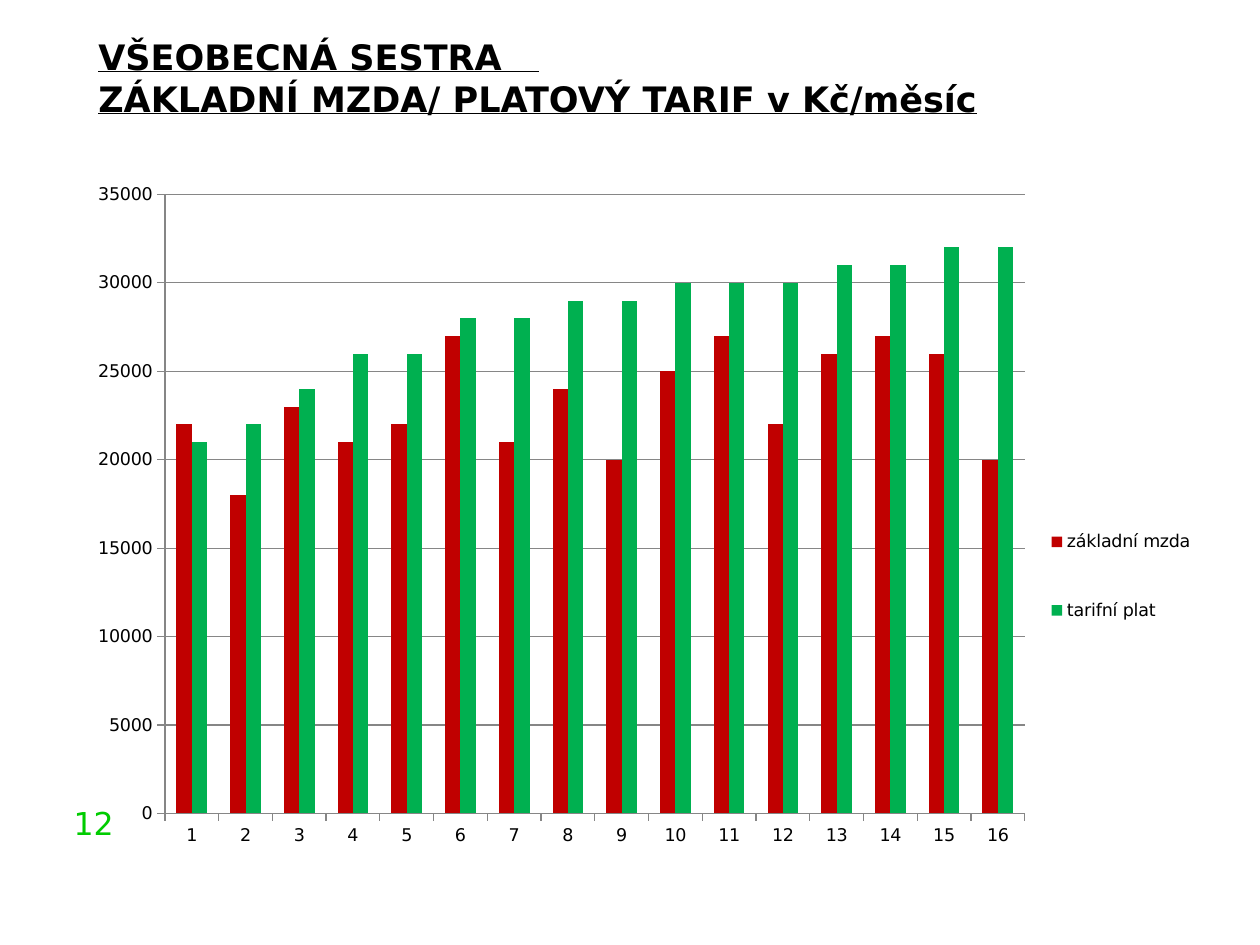
from pptx import Presentation
from pptx.chart.data import CategoryChartData
from pptx.dml.color import RGBColor
from pptx.enum.chart import XL_CHART_TYPE, XL_LEGEND_POSITION, XL_TICK_MARK
from pptx.enum.text import MSO_ANCHOR, PP_ALIGN
from pptx.oxml import parse_xml
from pptx.oxml.ns import nsdecls, qn
from pptx.util import Inches, Pt

FONT = "DejaVu Sans"
COLORS = {"text": "000000", "number": "00CC00", "wage": "C00000",
          "tariff": "00B050", "axis": "868686"}
WAGES = [22000, 18000, 23000, 21000, 22000, 27000, 21000, 24000,
         20000, 25000, 27000, 22000, 26000, 27000, 26000, 20000]
TARIFFS = [21000, 22000, 24000, 26000, 26000, 28000, 28000, 29000,
           29000, 30000, 30000, 30000, 31000, 31000, 32000, 32000]
SERIES = [("základní mzda", WAGES, "wage"), ("tarifní plat", TARIFFS, "tariff")]


def color(name):
    return RGBColor.from_string(COLORS[name])


def set_font(font, size, name="text"):
    font.name = FONT
    font.size = Pt(size)
    font.color.rgb = color(name)


def add_title(slide):
    title = slide.shapes.title
    title.left, title.top = Inches(0.68), Inches(0.21)
    title.width, title.height = Inches(8.81), Inches(1.32)
    frame = title.text_frame
    frame.text = ("VŠEOBECNÁ SESTRA   \v"
                  "ZÁKLADNÍ MZDA/ PLATOVÝ TARIF v Kč/měsíc")
    frame.vertical_anchor = MSO_ANCHOR.TOP
    frame.margin_top = Inches(0.07)
    para = frame.paragraphs[0]
    para.alignment = PP_ALIGN.LEFT
    for run in para.runs:
        set_font(run.font, 20)
        run.font.bold = run.font.underline = True


def add_number(slide):
    box = slide.shapes.add_textbox(Inches(0), Inches(6.33), Inches(1), Inches(0.58))
    frame = box.text_frame
    frame.word_wrap = True
    frame.text = "12"
    para = frame.paragraphs[0]
    para.alignment = PP_ALIGN.RIGHT
    set_font(para.runs[0].font, 18, "number")


def place(part, index, inner, x, y, w, h):
    """Fix a chart part at fractions of the chart's size."""
    for old in part.findall(qn("c:layout")):
        part.remove(old)
    target = '<c:layoutTarget val="inner"/>' if inner else ""
    sizes = "".join(f'<c:{tag} val="{val}"/>'
                    for tag, val in zip("xywh", (x, y, w, h)))
    part.insert(index, parse_xml(
        f'<c:layout {nsdecls("c")}><c:manualLayout>{target}'
        f'<c:xMode val="edge"/><c:yMode val="edge"/>{sizes}'
        '</c:manualLayout></c:layout>'))


def style_axis(axis):
    axis.major_tick_mark = XL_TICK_MARK.OUTSIDE
    axis.minor_tick_mark = XL_TICK_MARK.NONE
    axis.format.line.color.rgb = color("axis")
    axis.format.line.width = Pt(0.75)


def add_chart(slide):
    data = CategoryChartData()
    data.categories = [str(num) for num in range(1, len(WAGES) + 1)]
    for name, vals, _ in SERIES:
        data.add_series(name, vals)
    chart = slide.shapes.add_chart(
        XL_CHART_TYPE.COLUMN_CLUSTERED, Inches(0.59), Inches(1.38),
        Inches(8.98), Inches(5.46), data).chart
    set_font(chart.font, 10)
    chart.has_title = False

    plot = chart.plots[0]
    plot.gap_width = 150
    plot.overlap = 0
    plot.vary_by_categories = False
    for series, (_, _, name) in zip(plot.series, SERIES):
        series.format.fill.solid()
        series.format.fill.fore_color.rgb = color(name)

    style_axis(chart.category_axis)
    axis = chart.value_axis
    style_axis(axis)
    axis.minimum_scale, axis.maximum_scale, axis.major_unit = 0, 35000, 5000
    axis.has_major_gridlines = True
    grid = axis.major_gridlines.format.line
    grid.color.rgb = color("axis")
    grid.width = Pt(0.75)

    chart.has_legend = True
    legend = chart.legend
    legend.position = XL_LEGEND_POSITION.RIGHT
    legend.include_in_layout = False
    area = chart.element.find(".//" + qn("c:plotArea"))
    place(area, 0, True, 0.08, 0.03, 0.76, 0.9)
    place(chart.element.find(".//" + qn("c:legend")), 1, False,
          0.85, 0.45, 0.15, 0.27)


def main():
    deck = Presentation()
    deck.slide_width, deck.slide_height = Inches(10), Inches(7.5)
    slide = deck.slides.add_slide(deck.slide_layouts[5])
    add_number(slide)
    add_title(slide)
    add_chart(slide)
    deck.save("out.pptx")


if __name__ == "__main__":
    main()
